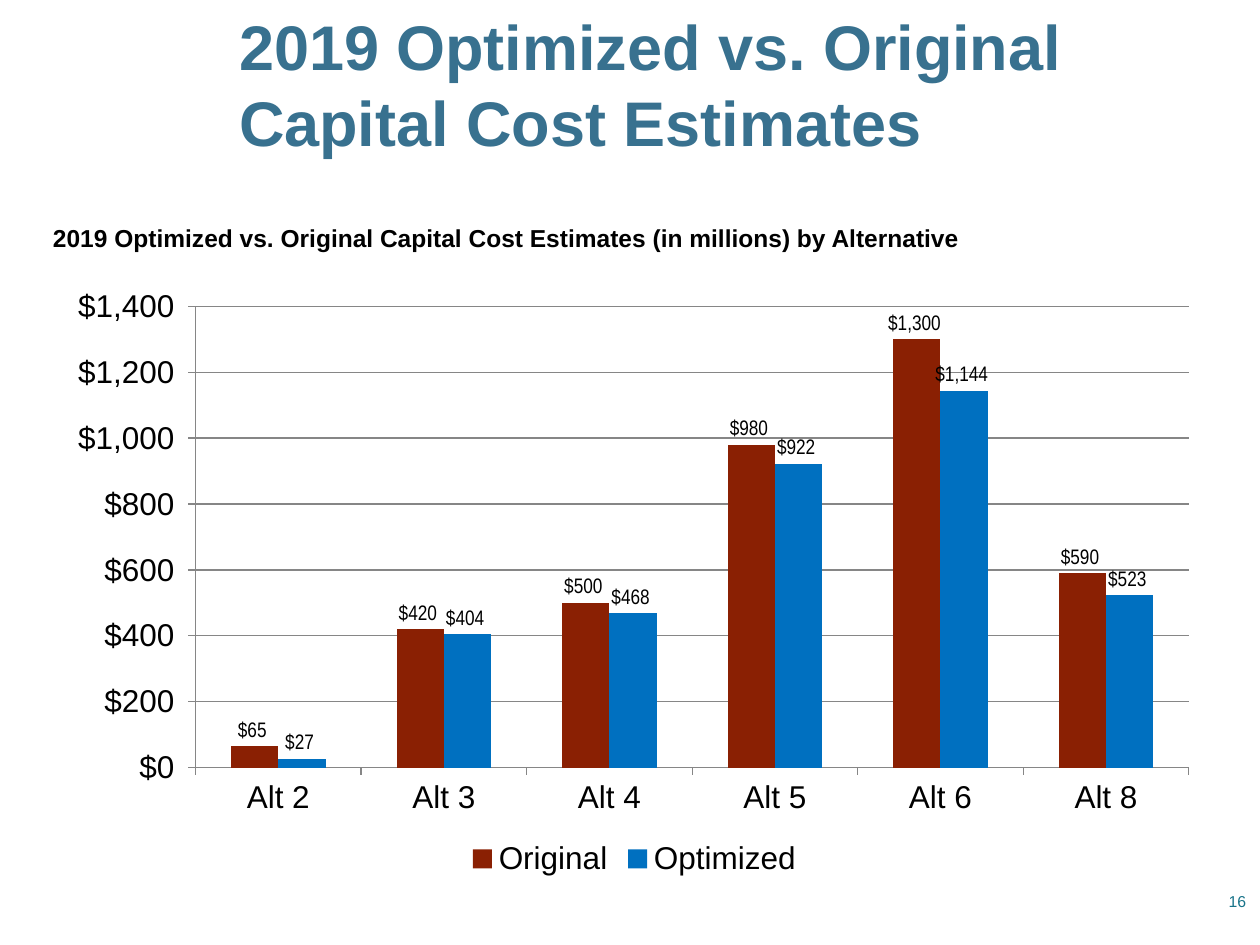
from dataclasses import dataclass
from lxml.etree import SubElement
from pptx import Presentation
from pptx.chart.data import CategoryChartData
from pptx.dml.color import RGBColor
from pptx.enum.chart import (XL_CHART_TYPE, XL_LABEL_POSITION,
                             XL_LEGEND_POSITION, XL_TICK_MARK)
from pptx.enum.text import MSO_ANCHOR, PP_ALIGN
from pptx.oxml.ns import qn
from pptx.util import Emu, Pt


@dataclass(frozen=True)
class Theme:
    font: str = "Arial"
    narrow: str = "Arial Narrow"
    title: str = "38718F"
    number: str = "19748A"
    ink: str = "000000"
    grid: str = "868686"
    bars: tuple = ("8A2003", "0070C0")
    title_size: int = 36
    head_size: int = 14
    page_size: int = 9
    chart_size: int = 18
    label_size: int = 12


THEME = Theme()
MONEY = r'"$"#,##0_);[Red]\("$"#,##0\)'
CATS = ["Alt 2", "Alt 3", "Alt 4", "Alt 5", "Alt 6", "Alt 8"]
COSTS = {
    "Original": [65, 420, 500, 980, 1300, 590],
    "Optimized": [27, 404, 468, 922, 1144, 523],
}


def px(num):
    return Emu(round(num * 914400 / 126))


def style(font, size, color, bold=False, name=THEME.font):
    font.name, font.size, font.bold = name, Pt(size), bold
    font.color.rgb = RGBColor.from_string(color)


def add_text(slide, box, text, size, color, bold=False, wrap=True,
             anchor=MSO_ANCHOR.MIDDLE, align=PP_ALIGN.LEFT, pads=(0, 0, 0, 0)):
    frame = slide.shapes.add_textbox(*map(px, box)).text_frame
    frame.word_wrap, frame.vertical_anchor = wrap, anchor
    (frame.margin_left, frame.margin_top,
     frame.margin_right, frame.margin_bottom) = map(px, pads)
    para = frame.paragraphs[0]
    para.text, para.alignment = text, align
    style(para.font, size, color, bold)


def set_line(line):
    line.color.rgb = RGBColor.from_string(THEME.grid)
    line.width = Pt(0.75)


def set_plot(chart, **area):
    """Fix the inner plot area, in fractions of the chart."""
    plot = chart._chartSpace.chart.plotArea
    for old in plot.findall(qn("c:layout")):
        plot.remove(old)
    layout = SubElement(plot, qn("c:layout"))
    plot.insert(0, layout)
    manual = SubElement(layout, qn("c:manualLayout"))
    modes = {"layoutTarget": "inner", "xMode": "edge", "yMode": "edge"}
    for tag, val in {**modes, **area}.items():
        SubElement(manual, qn("c:" + tag)).set("val", str(val))


def add_bars(slide, box):
    data = CategoryChartData(number_format=MONEY)
    data.categories = CATS
    for name, vals in COSTS.items():
        data.add_series(name, vals)
    chart = slide.shapes.add_chart(
        XL_CHART_TYPE.COLUMN_CLUSTERED, *map(px, box), data).chart
    style(chart.font, THEME.chart_size, THEME.ink)
    chart.has_title = False
    set_plot(chart, x=0.12, y=0.05, w=0.86, h=0.76)

    # Legend
    chart.has_legend = True
    chart.legend.position = XL_LEGEND_POSITION.BOTTOM
    chart.legend.include_in_layout = False

    # Axes
    cost = chart.value_axis
    cost.minimum_scale, cost.maximum_scale, cost.major_unit = 0, 1400, 200
    cost.tick_labels.number_format = MONEY
    cost.tick_labels.number_format_is_linked = False
    cost.has_major_gridlines = True
    set_line(cost.major_gridlines.format.line)
    for axis in (chart.category_axis, cost):
        axis.major_tick_mark = XL_TICK_MARK.OUTSIDE
        set_line(axis.format.line)

    # Columns and their values
    plot = chart.plots[0]
    plot.gap_width, plot.overlap, plot.vary_by_categories = 150, 0, False
    for series, color in zip(plot.series, THEME.bars):
        series.format.fill.solid()
        series.format.fill.fore_color.rgb = RGBColor.from_string(color)
        series.invert_if_negative = False
        labels = series.data_labels
        labels.show_value = True
        labels.position = XL_LABEL_POSITION.OUTSIDE_END
        labels.number_format = MONEY
        labels.number_format_is_linked = False
        style(labels.font, THEME.label_size, THEME.ink, name=THEME.narrow)


def main():
    deck = Presentation()
    deck.slide_width, deck.slide_height = px(1260), px(945)
    slide = deck.slides.add_slide(deck.slide_layouts[6])

    # Title
    add_text(slide, (233, 4, 992, 158),
             "2019 Optimized vs. Original Capital Cost Estimates",
             THEME.title_size, THEME.title, bold=True, pads=(6, 3, 3, 3))
    # Page number
    add_text(slide, (1192, 876, 67, 50), "16", THEME.page_size, THEME.number,
             align=PP_ALIGN.RIGHT, pads=(13, 6, 13, 6))
    # Chart heading
    add_text(slide, (53, 223, 934, 30),
             "2019 Optimized vs. Original Capital Cost Estimates "
             "(in millions) by Alternative",
             THEME.head_size, THEME.ink, bold=True, wrap=False,
             anchor=MSO_ANCHOR.TOP)
    # Cost chart
    add_bars(slide, (57, 276, 1155, 607))
    deck.save("out.pptx")


if __name__ == "__main__":
    main()
